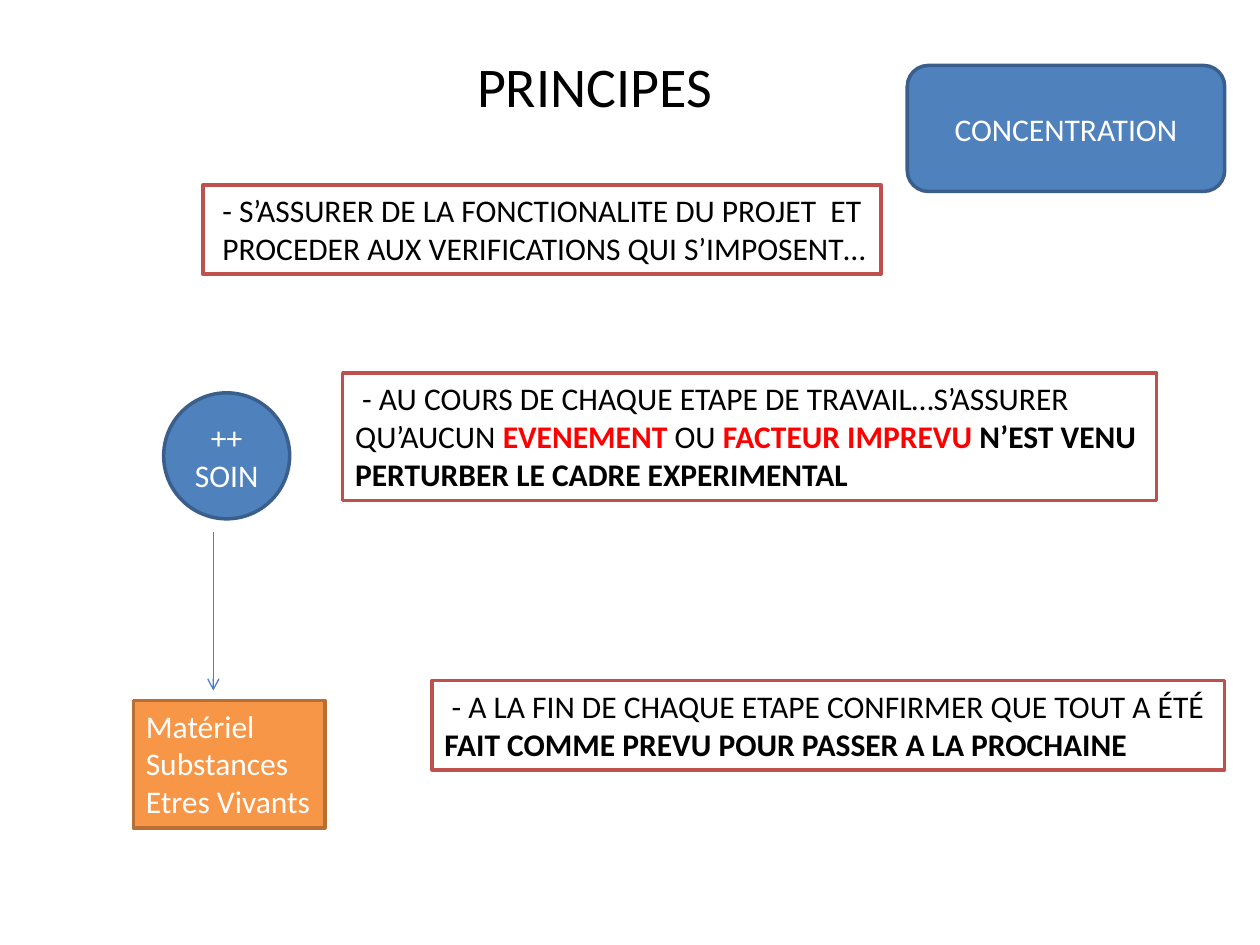
from dataclasses import dataclass

from lxml import etree
from pptx import Presentation
from pptx.dml.color import RGBColor
from pptx.enum.shapes import MSO_CONNECTOR, MSO_SHAPE
from pptx.enum.text import MSO_ANCHOR, MSO_AUTO_SIZE, PP_ALIGN
from pptx.oxml.ns import qn
from pptx.util import Cm, Pt

RECT, OVAL, ROUNDED = MSO_SHAPE.RECTANGLE, MSO_SHAPE.OVAL, MSO_SHAPE.ROUNDED_RECTANGLE
LEFT, CENTER = PP_ALIGN.LEFT, PP_ALIGN.CENTER


@dataclass(frozen=True)
class Theme:
    font: str = "Calibri"
    title: Pt = Pt(32)
    body: Pt = Pt(18)
    black: RGBColor = RGBColor(0x00, 0x00, 0x00)
    white: RGBColor = RGBColor(0xFF, 0xFF, 0xFF)
    alert: RGBColor = RGBColor(0xFF, 0x00, 0x00)
    frame: RGBColor = RGBColor(0xC0, 0x50, 0x4D)
    blue: RGBColor = RGBColor(0x4F, 0x81, 0xBD)
    blue_edge: RGBColor = RGBColor(0x3A, 0x5F, 0x8C)
    orange: RGBColor = RGBColor(0xF7, 0x96, 0x46)
    orange_edge: RGBColor = RGBColor(0xB7, 0x6F, 0x34)
    arrow: RGBColor = RGBColor(0x4B, 0x7E, 0xBC)


theme = Theme()


def write(tf, lines, size, color, align):
    """Fill tf with lines, each a list of (text, bold, colour or None for the default)."""
    for i, runs in enumerate(lines):
        p = tf.paragraphs[0] if i == 0 else tf.add_paragraph()
        p.alignment = align
        p.font.name, p.font.size, p.font.color.rgb = theme.font, size, color
        for text, bold, accent in runs:
            r = p.add_run()
            r.text = text
            if bold:
                r.font.bold = True
            if accent is not None:
                r.font.color.rgb = accent


def add_box(s, kind, box, fill, edge, color, lines, align):
    sp = s.shapes.add_shape(kind, *map(Cm, box))
    sp.shadow.inherit = False
    sp.fill.solid()
    sp.fill.fore_color.rgb = fill
    sp.line.color.rgb = edge
    sp.line.width = Pt(2)
    tf = sp.text_frame
    if align == LEFT:
        tf.word_wrap = False
        tf.auto_size = MSO_AUTO_SIZE.SHAPE_TO_FIT_TEXT
        tf.vertical_anchor = MSO_ANCHOR.TOP
    else:
        tf.word_wrap = True
        tf.vertical_anchor = MSO_ANCHOR.MIDDLE
    write(tf, lines, theme.body, color, align)


prs = Presentation()
prs.slide_width, prs.slide_height = Cm(25.4), Cm(19.05)
s = prs.slides.add_slide(prs.slide_layouts[6])

# Title
title = s.shapes.add_textbox(Cm(3.1), Cm(0.91), Cm(17.78), Cm(2.21))
title.text_frame.word_wrap = True
write(title.text_frame, [[("PRINCIPES", False, None)]], theme.title, theme.black, CENTER)
title.text_frame.paragraphs[0].space_before = Pt(2)

# The three principles
principles = [
    ((4.09, 3.73, 13.67, 1.8), [
        [(" - S’ASSURER DE LA FONCTIONALITE DU PROJET  ET", False, None)],
        [(" PROCEDER AUX VERIFICATIONS QUI S’IMPOSENT…", False, None)],
    ]),
    ((6.91, 7.52, 16.41, 2.57), [
        [(" - AU COURS DE CHAQUE ETAPE DE TRAVAIL…S’ASSURER", False, None)],
        [("QU’AUCUN ", False, None), ("EVENEMENT", True, theme.alert), (" OU ", False, None),
         ("FACTEUR IMPREVU ", True, theme.alert), ("N’EST VENU", True, None)],
        [("PERTURBER LE CADRE EXPERIMENTAL", True, None)],
    ]),
    ((8.71, 13.72, 15.98, 1.8), [
        [(" - A LA FIN DE CHAQUE ETAPE CONFIRMER QUE TOUT A ÉTÉ", False, None)],
        [("FAIT COMME PREVU POUR PASSER A LA PROCHAINE", True, None)],
    ]),
]
for box, lines in principles:
    add_box(s, RECT, box, theme.white, theme.frame, theme.black, lines, LEFT)

# Keywords: care, what it applies to, concentration
keywords = [
    (OVAL, (3.3, 7.92, 2.54, 2.54), theme.blue, theme.blue_edge, ["++", "SOIN"], CENTER),
    (RECT, (2.69, 14.12, 3.86, 2.57), theme.orange, theme.orange_edge,
     ["Matériel", "Substances", "Etres Vivants"], LEFT),
    (ROUNDED, (18.29, 1.32, 6.4, 2.54), theme.blue, theme.blue_edge, ["CONCENTRATION"], CENTER),
]
for kind, box, fill, edge, words, align in keywords:
    lines = [[(word, False, None)] for word in words]
    add_box(s, kind, box, fill, edge, theme.white, lines, align)

# Arrow from care to what it applies to
arrow = s.shapes.add_connector(MSO_CONNECTOR.STRAIGHT, Cm(4.3), Cm(10.72), Cm(4.3), Cm(13.92))
arrow.line.color.rgb = theme.arrow
arrow.line.width = Pt(0.75)
etree.SubElement(arrow.line._get_or_add_ln(), qn("a:tailEnd"), type="arrow")
etree.SubElement(arrow._element.spPr, qn("a:effectLst"))

prs.save("out.pptx")
